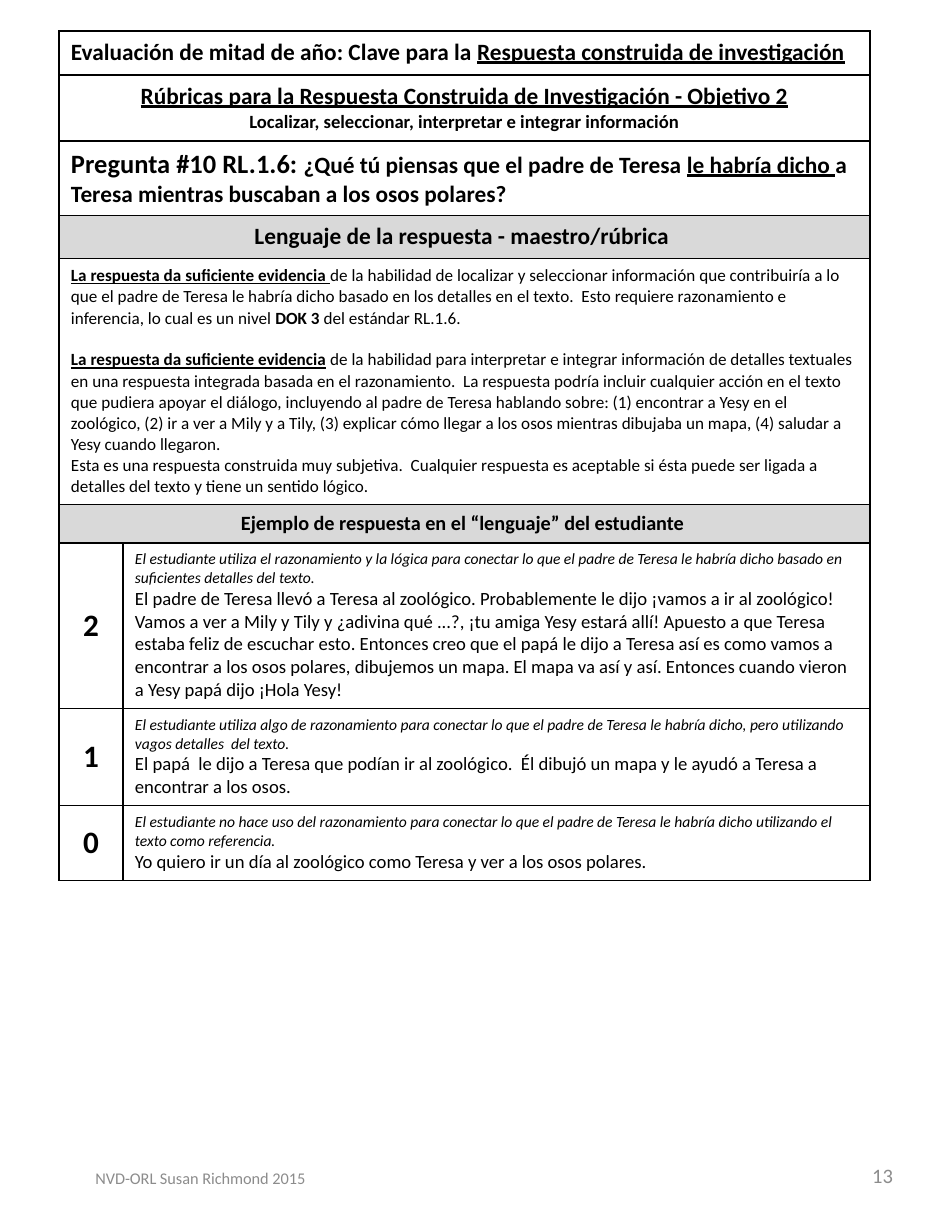
"""Build the answer key and rubric page for a constructed research response."""
from pptx import Presentation
from pptx.dml.color import RGBColor
from pptx.enum.text import MSO_ANCHOR as Anchor, PP_ALIGN as Align
from pptx.oxml import parse_xml
from pptx.oxml.ns import nsdecls
from pptx.util import Emu, Pt

PX = 914400 / 112
BLACK = RGBColor(0x00, 0x00, 0x00)
GREY = RGBColor(0x8C, 0x8C, 0x8C)
BAND = RGBColor(0xD9, 0xD9, 0xD9)
WHITE = RGBColor(0xFF, 0xFF, 0xFF)
FONT = "Calibri"

HEADING = dict(size=Pt(15), bold=True)
HEADING_LINE = dict(HEADING, underline=True)
SUBHEADING = dict(size=Pt(12), bold=True)
QUESTION = dict(size=Pt(17), bold=True)
BODY = dict(size=Pt(11))
BODY_BOLD = dict(BODY, bold=True)
BODY_LINE = dict(BODY_BOLD, underline=True)
EXAMPLE = dict(size=Pt(13), bold=True)
SCORE = dict(size=Pt(20), bold=True)
CRITERION = dict(size=Pt(10), italic=True)
ANSWER = dict(size=Pt(12))
NUMBER = dict(size=Pt(13.2), color=GREY)
FOOTER = dict(size=Pt(10.5), color=GREY)

SECTIONS = [
    (44, Align.LEFT, WHITE, [
        [("Evaluación de mitad de año: Clave para la ", HEADING),
         ("Respuesta construida de investigación", HEADING_LINE)]]),
    (66, Align.CENTER, WHITE, [
        [("Rúbricas para la Respuesta Construida de Investigación - Objetivo 2", HEADING_LINE)],
        [("Localizar, seleccionar, interpretar e integrar información", SUBHEADING)]]),
    (72, Align.LEFT, WHITE, [
        [("Pregunta #10 RL.1.6: ", QUESTION),
         ("¿Qué tú piensas que el padre de Teresa ", HEADING),
         ("le habría dicho ", HEADING_LINE),
         ("a Teresa mientras buscaban a los osos polares?", HEADING)]]),
    (41, Align.CENTER, BAND, [[("Lenguaje de la respuesta - maestro/rúbrica ", HEADING)]]),
    (239, Align.LEFT, WHITE, [
        [("La respuesta da suficiente evidencia ", BODY_LINE),
         ("de la habilidad de localizar y seleccionar información que contribuiría a lo que el "
          "padre de Teresa le habría dicho basado en los detalles en el texto.  Esto requiere "
          "razonamiento e inferencia, lo cual es un nivel ", BODY),
         ("DOK 3 ", BODY_BOLD),
         ("del estándar RL.1.6.", BODY)],
        [("La respuesta da suficiente evidencia", BODY_LINE),
         (" de la habilidad para interpretar e integrar información de detalles textuales en una "
          "respuesta integrada basada en el razonamiento.  La respuesta podría incluir cualquier "
          "acción en el texto que pudiera apoyar el diálogo, incluyendo al padre de Teresa "
          "hablando sobre: (1) encontrar a Yesy en el zoológico, (2) ir a ver a Mily y a Tily, "
          "(3) explicar cómo llegar a los osos mientras dibujaba un mapa, (4) saludar a Yesy "
          "cuando llegaron.", BODY)],
        [("Esta es una respuesta construida muy subjetiva.  Cualquier respuesta es aceptable si "
          "ésta puede ser ligada a detalles del texto y tiene un sentido lógico.", BODY)]]),
    (37, Align.CENTER, BAND, [[("Ejemplo de respuesta en el “lenguaje” del estudiante ", EXAMPLE)]]),
]
EVIDENCE_ROW = 4

SCORES = [
    (162, "2",
     "El estudiante utiliza el razonamiento y la lógica para conectar lo que el padre de Teresa "
     "le habría dicho basado en suficientes detalles del texto.",
     "El padre de Teresa llevó a Teresa al zoológico. Probablemente le dijo ¡vamos a ir al "
     "zoológico! Vamos a ver a Mily y Tily y ¿adivina qué ...?, ¡tu amiga Yesy estará allí! "
     "Apuesto a que Teresa estaba feliz de escuchar esto. Entonces creo que el papá le dijo a "
     "Teresa así es como vamos a encontrar a los osos polares, dibujemos un mapa. El mapa va así "
     "y así. Entonces cuando vieron a Yesy papá dijo ¡Hola Yesy!"),
    (94, "1",
     "El estudiante utiliza algo de razonamiento para conectar lo que el padre de Teresa le "
     "habría dicho, pero utilizando vagos detalles  del texto.",
     "El papá  le dijo a Teresa que podían ir al zoológico.  Él dibujó un mapa y le ayudó a "
     "Teresa a encontrar a los osos."),
    (72, "0",
     "El estudiante no hace uso del razonamiento para conectar lo que el padre de Teresa le "
     "habría dicho utilizando el texto como referencia.",
     "Yo quiero ir un día al zoológico como Teresa y ver a los osos polares."),
]

PAGE_MARKS = [
    ((682, 1142, 222, 66), Align.RIGHT, "13", NUMBER),
    ((50, 1145, 301, 66), Align.CENTER, "NVD-ORL Susan Richmond 2015", FOOTER),
]
TABLE_LEFT, TABLE_TOP = 59, 31
COLUMNS = [64, 747]
INSETS = dict(margin_left=12, margin_right=12, margin_top=7, margin_bottom=7)


def px(length):
    return Emu(round(length * PX))


def write(frame, paragraphs, align):
    for index, runs in enumerate(paragraphs):
        paragraph = frame.paragraphs[0] if index == 0 else frame.add_paragraph()
        paragraph.alignment = align
        for text, style in runs:
            run = paragraph.add_run()
            run.text = text
            settings = dict(name=FONT, bold=False, italic=False, underline=False) | style
            run.font.color.rgb = settings.pop("color", BLACK)
            for attribute, value in settings.items():
                setattr(run.font, attribute, value)


def dress(cell, fill):
    cell.fill.solid()
    cell.fill.fore_color.rgb = fill
    for attribute, value in INSETS.items():
        setattr(cell, attribute, px(value))
    properties = cell._tc.get_or_add_tcPr()
    for index, side in enumerate(("lnL", "lnR", "lnT", "lnB")):
        properties.insert(index, parse_xml(
            f'<a:{side} {nsdecls("a")} w="12700"><a:solidFill><a:srgbClr val="{BLACK}"/>'
            f'</a:solidFill></a:{side}>'))


def build_rubric(slide):
    heights = [row[0] for row in SECTIONS + SCORES]
    table = slide.shapes.add_table(
        len(heights), len(COLUMNS), px(TABLE_LEFT), px(TABLE_TOP),
        px(sum(COLUMNS)), px(sum(heights))).table
    for column, width in zip(table.columns, COLUMNS):
        column.width = px(width)
    for row, height in zip(table.rows, heights):
        row.height = px(height)

    fills = [section[2] for section in SECTIONS] + [WHITE] * len(SCORES)
    for row, fill in zip(table.rows, fills):
        for cell in row.cells:
            dress(cell, fill)

    for index, (_, align, _, paragraphs) in enumerate(SECTIONS):
        section = table.cell(index, 0)
        section.merge(table.cell(index, 1))
        write(section.text_frame, paragraphs, align)
    evidence = table.cell(EVIDENCE_ROW, 0).text_frame
    evidence.paragraphs[1].space_before = Pt(13.4)

    for index, (_, score, criterion, answer) in enumerate(SCORES, len(SECTIONS)):
        mark, sample = table.cell(index, 0), table.cell(index, 1)
        mark.vertical_anchor = Anchor.MIDDLE
        write(mark.text_frame, [[(score, SCORE)]], Align.CENTER)
        write(sample.text_frame, [[(criterion, CRITERION)], [(answer, ANSWER)]], Align.LEFT)


def main():
    deck = Presentation()
    deck.slide_width, deck.slide_height = px(952), px(1232)
    slide = deck.slides.add_slide(deck.slide_layouts[6])
    build_rubric(slide)
    for place, align, text, style in PAGE_MARKS:
        frame = slide.shapes.add_textbox(*map(px, place)).text_frame
        frame.word_wrap = True
        frame.vertical_anchor = Anchor.MIDDLE
        write(frame, [[(text, style)]], align)
    deck.save("out.pptx")


if __name__ == "__main__":
    main()
